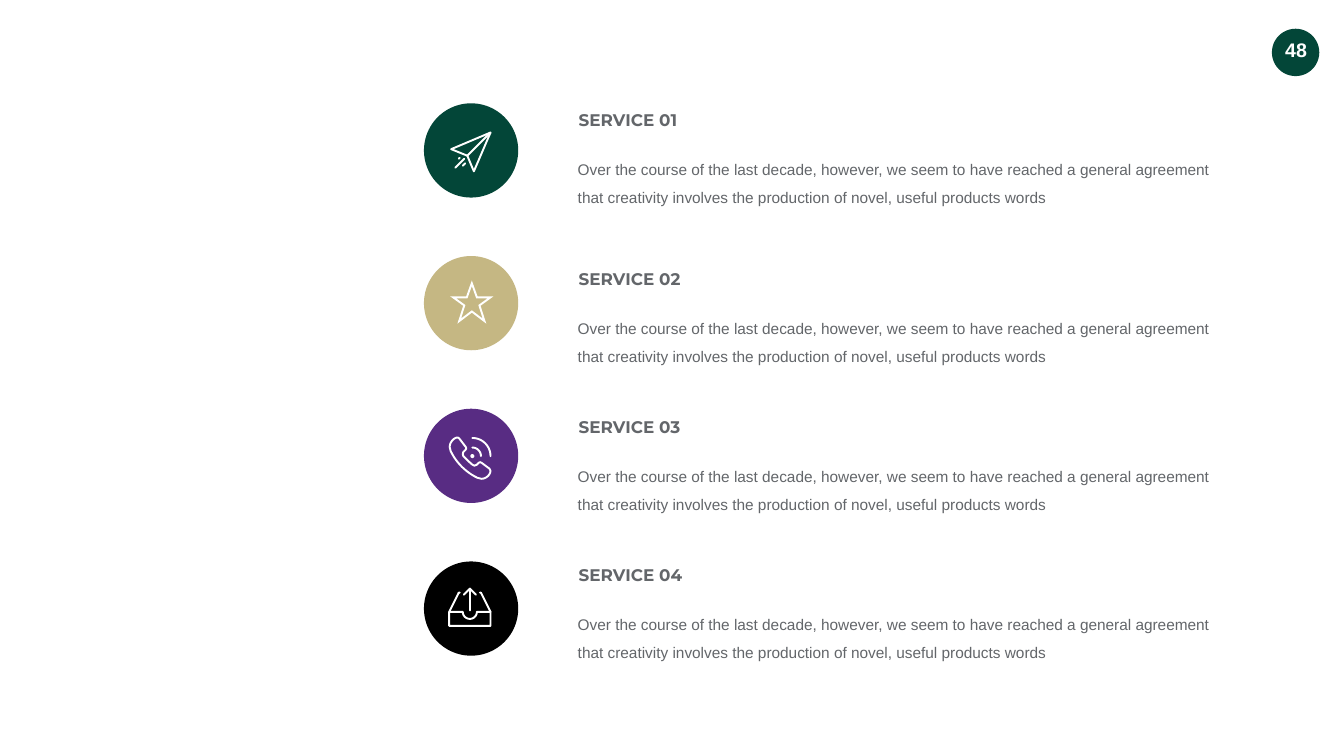
from math import cos, radians, sin

from lxml import etree
from pptx import Presentation
from pptx.dml.color import RGBColor
from pptx.enum.shapes import MSO_SHAPE as Shape
from pptx.enum.text import MSO_ANCHOR as Anchor, MSO_AUTO_SIZE as AutoSize, PP_ALIGN as Align
from pptx.oxml.ns import qn
from pptx.util import Inches, Pt

COLORS = {
    "green": "034638",
    "gold": "C5B783",
    "purple": "582C83",
    "black": "000000",
    "white": "FFFFFF",
    "gray": "63666A",
}
DESCRIPTION = (
    "Over the course of the last decade, however, we seem to have reached a general "
    "agreement that creativity involves the production of novel, useful products words"
)
CIRCLE_SIZE = 1.87


def rgb(name):
    return RGBColor.from_string(COLORS[name])


def add_text(slide, text, left, top, width, height, *, size, font="Arial", color="gray",
             bold=False, align=Align.LEFT, anchor=Anchor.TOP, wrap=False,
             inset=(0.1, 0.05), line_spacing=None):
    box = slide.shapes.add_textbox(Inches(left), Inches(top), Inches(width), Inches(height))
    frame = box.text_frame
    frame.word_wrap = wrap
    frame.auto_size = AutoSize.SHAPE_TO_FIT_TEXT
    frame.vertical_anchor = anchor
    frame.margin_left = frame.margin_right = Inches(inset[0])
    frame.margin_top = frame.margin_bottom = Inches(inset[1])
    paragraph = frame.paragraphs[0]
    paragraph.alignment = align
    if line_spacing:
        paragraph.line_spacing = Pt(line_spacing)
    run = paragraph.add_run()
    run.text = text
    run.font.size = Pt(size)
    run.font.name = font
    run.font.bold = bold
    run.font.color.rgb = rgb(color)


def add_circle(slide, left, top, size, color):
    circle = slide.shapes.add_shape(
        Shape.OVAL, Inches(left), Inches(top), Inches(size), Inches(size))
    circle.shadow.inherit = False
    circle.fill.solid()
    circle.fill.fore_color.rgb = rgb(color)
    circle.line.fill.background()


# Icon geometry, in inches from the top left of the circle
def arc(center_x, center_y, radius, start, end, steps=16):
    angles = [radians(start + (end - start) * i / steps) for i in range(steps + 1)]
    return [(center_x + radius * cos(a), center_y + radius * sin(a)) for a in angles]


def curve(start, control_1, control_2, end, steps=12):
    points = []
    for i in range(steps + 1):
        t = i / steps
        weights = ((1 - t) ** 3, 3 * t * (1 - t) ** 2, 3 * t ** 2 * (1 - t), t ** 3)
        points.append(tuple(
            sum(weight * value for weight, value in zip(weights, values))
            for values in zip(start, control_1, control_2, end)))
    return points


def mirror(points, axis):
    return [(2 * axis - x, y) for x, y in points]


def plane_strokes():
    tip, notch = (1.32, 0.58), (0.86, 1.04)
    return [
        ([tip, (0.54, 0.91), notch, (0.99, 1.35)], True),
        ([notch, tip], False),
        ([(0.82, 1.19), (0.77, 1.24)], False),
        ([(0.80, 1.10), (0.62, 1.28)], False),
        ([(0.71, 1.08), (0.69, 1.10)], False),
    ]


def star_strokes():
    right = [(0.95, 0.54), (1.05, 0.82), (1.32, 0.82), (1.1, 0.98), (1.2, 1.29), (0.95, 1.1)]
    return [(right + mirror(right[-2:0:-1], 0.95), True)]


def phone_strokes():
    handset = [
        (0.70, 0.59), (0.83, 0.76), (0.84, 0.79), (0.82, 0.82), (0.78, 0.86),
        (0.77, 0.90), (0.78, 0.94), (0.87, 1.03), (0.96, 1.11), (1.00, 1.13),
        (1.05, 1.11), (1.09, 1.07), (1.11, 1.06), (1.14, 1.07), (1.30, 1.19),
        *curve((1.32, 1.23), (1.32, 1.30), (1.24, 1.39), (1.14, 1.39)),
        *curve((1.06, 1.37), (0.83, 1.26), (0.64, 1.07), (0.53, 0.84)),
        *curve((0.51, 0.76), (0.51, 0.66), (0.60, 0.57), (0.67, 0.57)),
    ]
    return [
        (handset, True),
        (arc(0.96, 0.94, 0.02, 0, 360), True),
        (arc(0.96, 0.94, 0.17, -90, 0), False),
        (arc(0.96, 0.94, 0.36, -90, 0), False),
    ]


def tray_strokes():
    middle = 0.91
    side = [(0.5, 1), (0.69, 0.62), (0.71, 0.62)]
    return [
        ([(0.5, 1), *arc(middle, 1, 0.14, 180, 0), (1.32, 1), (1.32, 1.28), (0.5, 1.28)], True),
        (side, False),
        (mirror(side, middle), False),
        ([(middle, 0.97), (middle, 0.54)], False),
        ([(0.79, 0.66), (middle, 0.54), (1.03, 0.66)], False),
    ]


def add_icon(slide, left, top, strokes, join):
    builder = None
    for points, closed in strokes:
        placed = [(Inches(left + x), Inches(top + y)) for x, y in points]
        if builder is None:
            builder = slide.shapes.build_freeform(*placed[0])
        else:
            builder.move_to(*placed[0])
        builder.add_line_segments(placed[1:], close=closed)
    icon = builder.convert_to_shape()
    icon.shadow.inherit = False
    icon.fill.background()
    icon.line.color.rgb = rgb("white")
    icon.line.width = Pt(2.75)
    outline = icon.line._get_or_add_ln()
    outline.set("cap", "rnd")
    etree.SubElement(outline, qn(f"a:{join}"))


def add_service(slide, left, circle_top, text_top, title, color, strokes, join):
    add_circle(slide, left, circle_top, CIRCLE_SIZE, color)
    add_icon(slide, left, circle_top, strokes, join)
    add_text(slide, title, left + 2.97, text_top, 2.4, 0.5,
             size=24, font="Montserrat", bold=True, anchor=Anchor.MIDDLE)
    add_text(slide, DESCRIPTION, left + 2.81, text_top + 0.74, 13.12, 1.3,
             size=22, wrap=True, inset=(0.24, 0.12), line_spacing=40.4)


def add_page_badge(slide, left, top, size, number):
    add_circle(slide, left, top, size, "green")
    add_text(slide, number, left + 0.04, top + 0.09, size - 0.06, 0.67, size=28,
             color="white", bold=True, align=Align.CENTER, inset=(0.2, 0.1))


def main():
    presentation = Presentation()
    presentation.slide_width = Inches(26.66)
    presentation.slide_height = Inches(15)
    slide = presentation.slides.add_slide(presentation.slide_layouts[6])

    add_page_badge(slide, 25.23, 0.57, 0.94, "48")

    # Four services: text top, circle colour, icon strokes and corner style
    services = [
        (2.12, "green", plane_strokes(), "round"),
        (5.28, "gold", star_strokes(), "miter"),
        (8.21, "purple", phone_strokes(), "round"),
        (11.15, "black", tray_strokes(), "round"),
    ]
    for index, (text_top, color, strokes, join) in enumerate(services):
        add_service(slide, 8.41, 2.05 + 3.03 * index, text_top,
                    f"SERVICE {index + 1:02}", color, strokes, join)

    presentation.save("out.pptx")


if __name__ == "__main__":
    main()
